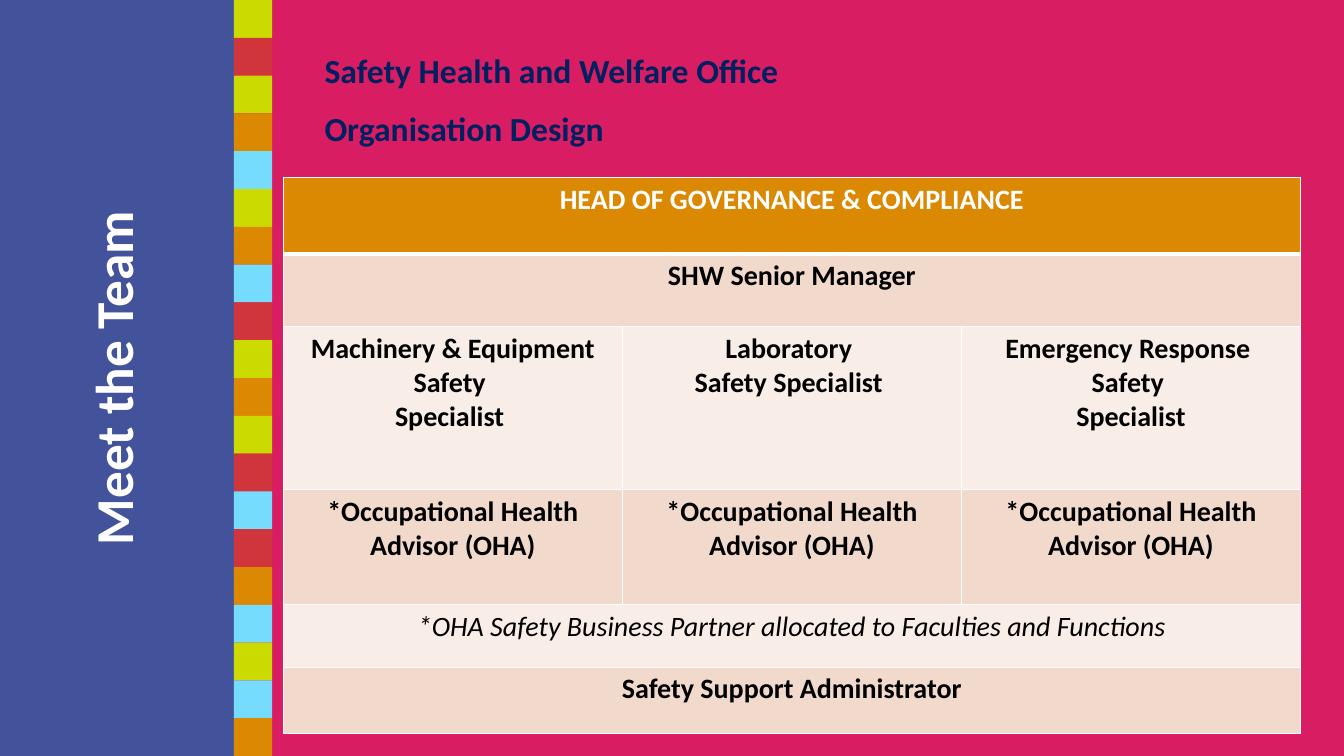
from lxml import etree
from pptx import Presentation
from pptx.dml.color import RGBColor
from pptx.enum.shapes import MSO_SHAPE
from pptx.enum.text import MSO_ANCHOR, PP_ALIGN
from pptx.oxml.ns import qn
from pptx.util import Inches, Pt

RECTANGLE = MSO_SHAPE.RECTANGLE
MIDDLE, TOP = MSO_ANCHOR.MIDDLE, MSO_ANCHOR.TOP
CENTER, LEFT = PP_ALIGN.CENTER, PP_ALIGN.LEFT

FONT = "Calibri"
COLORS = {
    "background": "D91D62",
    "panel": "42529B",
    "lime": "CBDA00",
    "red": "D1353C",
    "orange": "DB8802",
    "sky": "76DCFD",
    "navy": "002060",
    "dark_band": "F1DACC",
    "light_band": "F8EDE7",
    "white": "FFFFFF",
    "black": "000000",
}
STRIP = (
    "lime red lime orange sky lime orange sky red lime "
    "orange lime red sky red orange sky lime sky orange"
).split()
ADVISOR = "*Occupational Health Advisor (OHA)"
TEAM_ROWS = [
    (0.76, "orange", ["HEAD OF GOVERNANCE & COMPLIANCE"]),
    (0.72, "dark_band", ["SHW Senior Manager"]),
    (1.62, "light_band", [
        "Machinery & Equipment Safety \nSpecialist ",
        "Laboratory \nSafety Specialist ",
        "Emergency Response \nSafety \nSpecialist",
    ]),
    (1.14, "dark_band", [ADVISOR] * 3),
    (0.62, "light_band", ["*OHA Safety Business Partner allocated to Faculties and Functions"]),
    (0.66, "dark_band", ["Safety Support Administrator"]),
]
NOTE_ROW = 4


def color(name):
    return RGBColor.from_string(COLORS[name])


def write_text(text_frame, text, size, color_name, alignment, bold=True, italic=False):
    text_frame.word_wrap = True
    text_frame.text = text
    for paragraph in text_frame.paragraphs:
        paragraph.alignment = alignment
        for run in paragraph.runs:
            run.font.name = FONT
            run.font.size = Pt(size)
            run.font.bold = bold
            run.font.italic = italic
            run.font.color.rgb = color(color_name)


def add_block(slide, left, top, width, height, fill):
    shape = slide.shapes.add_shape(
        RECTANGLE, Inches(left), Inches(top), Inches(width), Inches(height))
    shape.shadow.inherit = False
    shape.fill.solid()
    shape.fill.fore_color.rgb = color(fill)
    shape.line.fill.background()
    return shape


def add_side_panel(slide, left, top, width, height):
    add_block(slide, left, top, width, height, "panel")
    title_width, title_height = height, 1.45
    center_x, center_y = left + 1.15, top + height / 2
    title = slide.shapes.add_textbox(
        Inches(center_x - title_width / 2), Inches(center_y - title_height / 2),
        Inches(title_width), Inches(title_height))
    title.rotation = 270
    title.text_frame.vertical_anchor = MIDDLE
    write_text(title.text_frame, "Meet the Team", 38, "white", CENTER)
    title.text_frame.paragraphs[0].line_spacing = 0.9


def add_color_strip(slide, left, top, width, height):
    step = height / len(STRIP)
    for index, fill in enumerate(STRIP):
        add_block(slide, left, top + index * step, width, step, fill)


def add_heading(slide, left, top, width, height):
    heading = add_block(slide, left, top, width, height, "background")
    heading.text_frame.vertical_anchor = TOP
    write_text(heading.text_frame, "Safety Health and Welfare Office\nOrganisation Design",
               24, "navy", LEFT)
    for paragraph in heading.text_frame.paragraphs:
        paragraph.space_before = Pt(12)


def set_borders(cell, top_width, bottom_width):
    properties = cell._tc.get_or_add_tcPr()
    widths = {"a:lnL": 1, "a:lnR": 1, "a:lnT": top_width, "a:lnB": bottom_width}
    for index, (tag, width) in enumerate(widths.items()):
        line = etree.Element(qn(tag), w=str(Pt(width)))
        fill = etree.SubElement(line, qn("a:solidFill"))
        etree.SubElement(fill, qn("a:srgbClr"), val=COLORS["white"])
        properties.insert(index, line)


def add_team_table(slide, left, top, width, columns=3):
    height = sum(row[0] for row in TEAM_ROWS)
    table = slide.shapes.add_table(
        len(TEAM_ROWS), columns, Inches(left), Inches(top),
        Inches(width), Inches(height)).table
    for row, (row_height, fill, texts) in enumerate(TEAM_ROWS):
        table.rows[row].height = Inches(row_height)
        if len(texts) == 1:
            table.cell(row, 0).merge(table.cell(row, columns - 1))
        for column in range(columns):
            cell = table.cell(row, column)
            cell.fill.solid()
            cell.fill.fore_color.rgb = color(fill)
            set_borders(cell, 3 if row == 1 else 1, 3 if row == 0 else 1)
        for column, text in enumerate(texts):
            is_note = row == NOTE_ROW
            write_text(table.cell(row, column).text_frame, text, 20,
                       "white" if row == 0 else "black", CENTER,
                       bold=not is_note, italic=is_note)


def main():
    presentation = Presentation()
    presentation.slide_width = Inches(13.33)
    presentation.slide_height = Inches(7.5)
    slide = presentation.slides.add_slide(presentation.slide_layouts[6])
    slide.background.fill.solid()
    slide.background.fill.fore_color.rgb = color("background")
    add_side_panel(slide, 0, 0, 2.33, 7.5)
    add_color_strip(slide, 2.32, 0, 0.38, 7.5)
    add_heading(slide, 3.12, 0.45, 8.82, 1.38)
    add_team_table(slide, 2.81, 1.76, 10.09)
    presentation.save("out.pptx")


if __name__ == "__main__":
    main()
